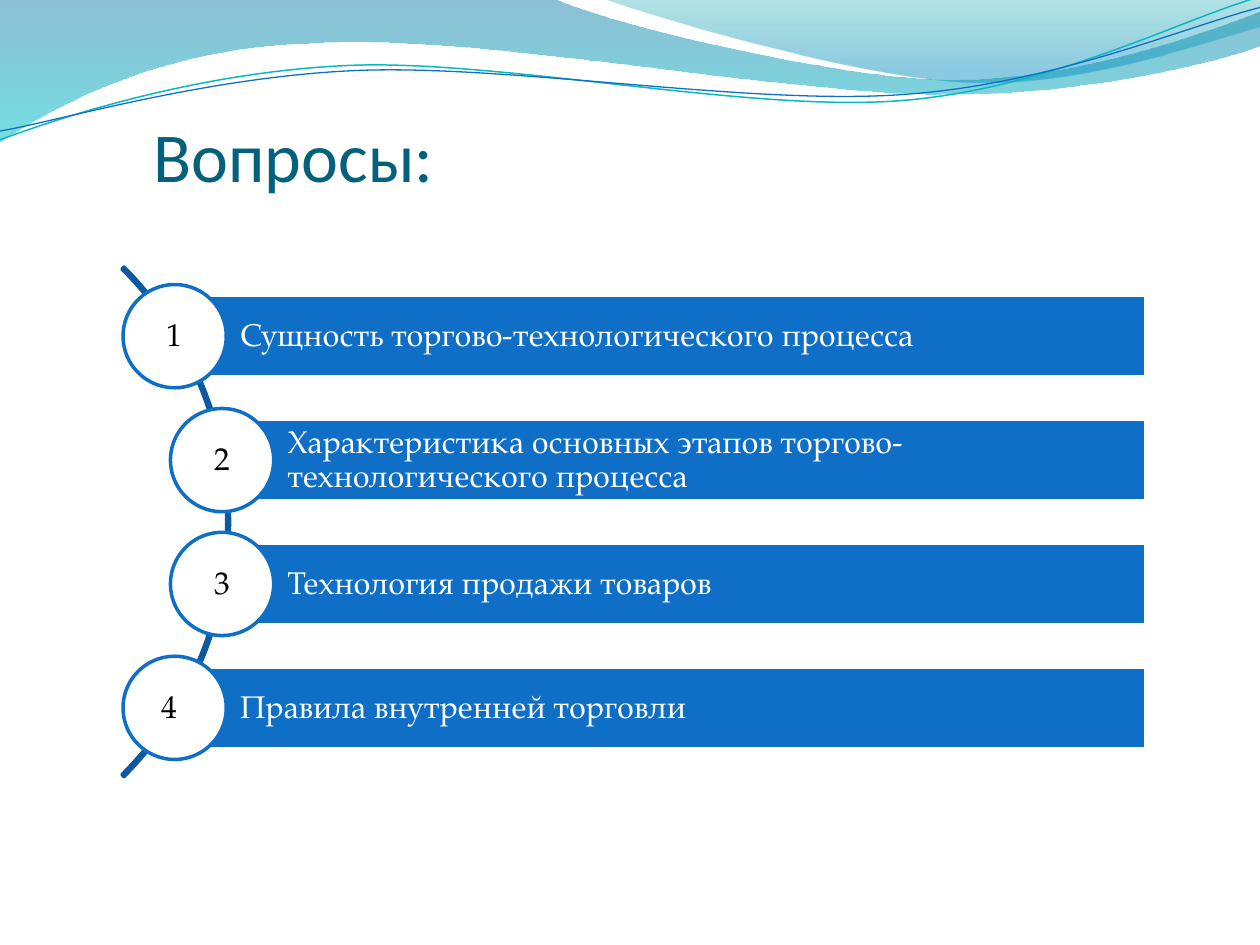
from dataclasses import dataclass
from math import cos, radians, sin

from lxml.etree import SubElement
from pptx import Presentation
from pptx.dml.color import RGBColor
from pptx.enum.shapes import MSO_SHAPE
from pptx.enum.text import MSO_ANCHOR, PP_ALIGN
from pptx.oxml.ns import qn
from pptx.util import Pt

COLORS = {
    "title": "04617B", "bar": "0F6FC6", "arc": "0C599F", "teal": "0AB8BF",
    "white": "FFFFFF", "black": "000000",
    "deep": "0074A1", "cyan": "00C6CF", "sea": "00A1A9", "sky": "008BBF",
}
HEADING_FONT, BODY_FONT = "Calibri", "TeX Gyre Pagella"
BAR_TOP, BAR_PITCH, BAR_HEIGHT, BAR_RIGHT = 168.7, 70.8, 46.8, 654.9
CIRCLE = 59
ARC = 411.8
TILT = 2.7


@dataclass
class Stop:
    position: float
    color: str
    opacity: int


@dataclass
class Wave:
    start: tuple
    segments: list  # 2 numbers: straight line; 6 numbers: Bezier curve
    stops: tuple = ()
    line: str = ""
    width: float = 0
    pivot: tuple = ()  # centre of a tilted wave


@dataclass
class Question:
    text: str
    bar_left: float
    number_left: float


WAVES = [
    Wave((0, 0), [
        (316.8, -0.7),
        (342.7, 12.2, 478.1, 45.4, 545.8, 45.4),
        (614.2, 45.4, 689.8, 18.7, 720, 6.5),
        (720.7, 25.9),
        (707.8, 31.7, 626.4, 54.7, 537.1, 54),
        (447.8, 54, 275, 20.2, 185, 24.5),
        (92.9, 25.9, 33.1, 59.8, -0.7, 81.4),
    ], stops=(Stop(0, "deep", 45), Stop(1, "cyan", 55))),
    Wave((344.9, -0.7), [
        (366.5, 7.9, 491, 44.6, 553.7, 46.8),
        (616.3, 49.7, 691.9, 23, 720, 15.1),
        (720, 0),
    ], stops=(Stop(0, "sea", 30), Stop(0.8, "sky", 45))),
    Wave((0, 79.9), [
        (34.6, 67, 113.8, 41, 199.4, 37.4),
        (284.4, 33.8, 427, 64.1, 513.4, 57.6),
        (599.8, 51.1, 675.4, 10.8, 718.6, -1.4),
    ], line="teal", width=0.85, pivot=(359.3, 41.4)),
    Wave((0, 74.9), [
        (33.8, 69.1, 118.1, 43.9, 203.8, 40.3),
        (290.2, 36.7, 429.8, 60.5, 516.2, 54),
        (601.9, 48.2, 677.5, 15.1, 720, 4.3),
    ], line="bar", width=0.75, pivot=(359.6, 42.5)),
]

QUESTIONS = [
    Question("Сущность торгово-технологического процесса", 99.8, 87.8),
    Question("Характеристика основных этапов торгово-технологического процесса",
             126.9, 115.2),
    Question("Технология продажи товаров", 126.9, 115.2),
    Question("Правила внутренней торговли", 99.8, 85),
]


def rgb(name: str) -> RGBColor:
    return RGBColor.from_string(COLORS[name])


def level(point: tuple, pivot: tuple) -> tuple:
    """Turn a point of a tilted wave back to the horizontal."""
    if not pivot:
        return point
    dx, dy = point[0] - pivot[0], point[1] - pivot[1]
    turn = radians(TILT)
    return (pivot[0] + dx * cos(turn) - dy * sin(turn),
            pivot[1] + dx * sin(turn) + dy * cos(turn))


def style(shape, fill: str = "", line: str = "", width: float = 2) -> None:
    shape.shadow.inherit = False
    if fill:
        shape.fill.solid()
        shape.fill.fore_color.rgb = rgb(fill)
    else:
        shape.fill.background()
    if line:
        shape.line.color.rgb = rgb(line)
        shape.line.width = Pt(width)
    else:
        shape.line.fill.background()


def draw_wave(slide, wave: Wave) -> None:
    points = [wave.start] + [segment[i:i + 2] for segment in wave.segments
                             for i in range(0, len(segment), 2)]
    start, *rest = [(Pt(x), Pt(y)) for x, y in
                    (level(point, wave.pivot) for point in points)]
    builder = slide.shapes.build_freeform(*start)
    builder.add_line_segments(rest, close=bool(wave.stops))
    ribbon = builder.convert_to_shape()

    # Join the three points of each curve into one Bezier segment
    steps = iter(list(ribbon._element.spPr.iter(qn("a:lnTo"))))
    for segment in wave.segments:
        first, *others = [next(steps) for _ in range(len(segment) // 2)]
        if others:
            first.tag = qn("a:cubicBezTo")
            for other in others:
                first.append(other[0])
                other.getparent().remove(other)

    style(ribbon, line=wave.line, width=wave.width)
    if wave.pivot:
        ribbon.rotation = 360 - TILT
    if wave.stops:
        ribbon.fill.gradient()
        ribbon.fill.gradient_angle = 270
        for target, stop in zip(ribbon.fill.gradient_stops, wave.stops):
            target.position = stop.position
            target.color.rgb = rgb(stop.color)
        for color, stop in zip(ribbon._element.spPr.iter(qn("a:srgbClr")), wave.stops):
            SubElement(color, qn("a:alpha"), val=str(stop.opacity * 1000))


def write(shape, text: str, font: str, size: float, color: str,
          line_spacing: float = 1.0, **frame_format) -> None:
    frame = shape.text_frame
    for name, value in ({"word_wrap": True} | frame_format).items():
        setattr(frame, name, value)
    paragraph = frame.paragraphs[0]
    paragraph.alignment = PP_ALIGN.LEFT
    paragraph.line_spacing = line_spacing
    run = paragraph.add_run()
    run.text = text
    for name, value in {"name": font, "size": Pt(size)}.items():
        setattr(run.font, name, value)
    run.font.color.rgb = rgb(color)


def add_preset(slide, kind, left: float, top: float, width: float, height: float):
    return slide.shapes.add_shape(kind, Pt(left), Pt(top), Pt(width), Pt(height))


def draw_question(slide, index: int, question: Question) -> None:
    top = BAR_TOP + index * BAR_PITCH
    bar = add_preset(slide, MSO_SHAPE.RECTANGLE, question.bar_left, top,
                     BAR_RIGHT - question.bar_left, BAR_HEIGHT)
    style(bar, "bar", "white")
    write(bar, question.text, BODY_FONT, 18, "white", line_spacing=0.9,
          vertical_anchor=MSO_ANCHOR.MIDDLE, margin_left=Pt(37.4),
          margin_right=Pt(3.6), margin_top=Pt(3.6), margin_bottom=Pt(3.6))

    circle = add_preset(slide, MSO_SHAPE.OVAL, question.bar_left - CIRCLE / 2,
                        top + (BAR_HEIGHT - CIRCLE) / 2, CIRCLE, CIRCLE)
    style(circle, "white", "bar")


def draw_number(slide, index: int, question: Question) -> None:
    number = slide.shapes.add_textbox(
        Pt(question.number_left), Pt(BAR_TOP + index * BAR_PITCH + 7.7),
        Pt(27.4), Pt(28.8))
    write(number, str(index + 1), BODY_FONT, 18, "black")


def main() -> None:
    deck = Presentation()
    deck.slide_width, deck.slide_height = Pt(720), Pt(540)
    slide = deck.slides.add_slide(deck.slide_layouts[6])

    # Waves along the top edge
    for wave in WAVES:
        draw_wave(slide, wave)

    # Title
    title = slide.shapes.add_textbox(Pt(87.8), Pt(-13.7), Pt(534.2), Pt(126))
    write(title, "Вопросы:", HEADING_FONT, 40, "title",
          vertical_anchor=MSO_ANCHOR.BOTTOM, margin_left=0, margin_right=0,
          margin_top=Pt(3.6), margin_bottom=0)

    # Arc behind the list
    arc = add_preset(slide, MSO_SHAPE.BLOCK_ARC, -280.6, 92.3, ARC, ARC)
    for position, value in enumerate((189, 27, 0.004)):
        arc.adjustments[position] = value
    style(arc, line="arc")

    # Questions, then their numbers on top
    for draw in (draw_question, draw_number):
        for index, question in enumerate(QUESTIONS):
            draw(slide, index, question)

    deck.save("out.pptx")


if __name__ == "__main__":
    main()
